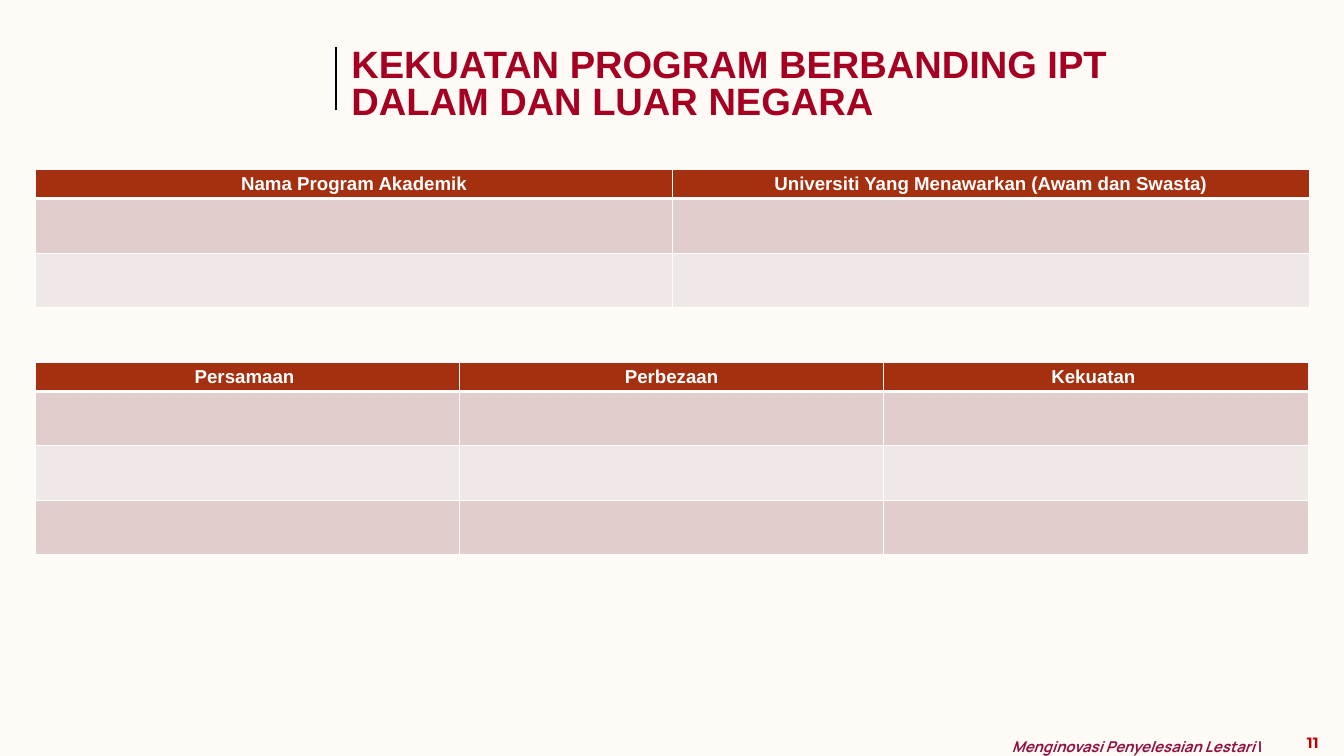
"""Builds the slide comparing a programme's strengths with other universities."""
from lxml.etree import SubElement
from pptx import Presentation
from pptx.dml.color import RGBColor
from pptx.enum.shapes import MSO_CONNECTOR
from pptx.enum.text import MSO_ANCHOR, PP_ALIGN
from pptx.oxml.ns import qn
from pptx.util import Cm, Pt

CREAM = RGBColor(0xFE, 0xFA, 0xF5)
CRIMSON = RGBColor(0xA5, 0x00, 0x21)
PLUM = RGBColor(0x90, 0x10, 0x42)
RED = RGBColor(0xC0, 0x00, 0x00)
BLACK = RGBColor(0, 0, 0)
WHITE = RGBColor(0xFF, 0xFF, 0xFF)
RUST = RGBColor(0xA5, 0x30, 0x0F)
BANDS = RGBColor(0xE1, 0xCD, 0xCC), RGBColor(0xF0, 0xE8, 0xE7)

TABLE_WIDTH = 48.13
HEADER_HEIGHT = 1.05
ROW_HEIGHT = 2.06


def write(paragraph, text, *, size, color, font="Arial", italic=False,
          align=PP_ALIGN.LEFT, spacing=None):
    """Add a bold run to a paragraph and return nothing."""
    paragraph.alignment = align
    if spacing:
        paragraph.line_spacing = spacing
    run = paragraph.add_run()
    run.text = text
    run.font.name = font
    run.font.size = Pt(size)
    run.font.bold = True
    run.font.italic = italic
    run.font.color.rgb = color


def add_text_area(slide, left, top, width, height, inset=None):
    """Add a wrapping text box and return its first paragraph."""
    frame = slide.shapes.add_textbox(Cm(left), Cm(top), Cm(width), Cm(height)).text_frame
    frame.word_wrap = True
    if inset is not None:
        frame.margin_left = frame.margin_right = Cm(inset)
        frame.margin_top = frame.margin_bottom = Cm(inset)
    return frame.paragraphs[0]


def add_rule(slide, x, top, bottom):
    """Add the vertical black rule beside the title."""
    rule = slide.shapes.add_connector(MSO_CONNECTOR.STRAIGHT, Cm(x), Cm(bottom), Cm(x), Cm(top))
    rule.line.color.rgb = BLACK
    rule.line.width = Pt(3)
    SubElement(rule._element.spPr, qn("a:effectLst"))


def set_borders(cell, top, bottom):
    """Draw white cell borders with the given top and bottom widths."""
    properties = cell._tc.get_or_add_tcPr()
    for side, width in (("L", 1), ("R", 1), ("T", top), ("B", bottom)):
        border = SubElement(properties, qn(f"a:ln{side}"), w=str(Pt(width)))
        fill = SubElement(border, qn("a:solidFill"))
        SubElement(fill, qn("a:srgbClr"), val=str(WHITE))


def add_blank_form(slide, left, top, headings, blank_rows):
    """Add a table with headings and banded empty rows."""
    height = HEADER_HEIGHT + blank_rows * ROW_HEIGHT
    form = slide.shapes.add_table(blank_rows + 1, len(headings), Cm(left), Cm(top),
                                  Cm(TABLE_WIDTH), Cm(height)).table
    for column in form.columns:
        column.width = Cm(TABLE_WIDTH / len(headings))
    for index, row in enumerate(form.rows):
        row.height = Cm(ROW_HEIGHT if index else HEADER_HEIGHT)
        for cell in row.cells:
            set_borders(cell, top=3 if index == 1 else 1, bottom=1 if index else 3)
            cell.fill.solid()
            cell.fill.fore_color.rgb = BANDS[(index - 1) % 2] if index else RUST
    for cell, heading in zip(form.rows[0].cells, headings):
        cell.vertical_anchor = MSO_ANCHOR.MIDDLE
        write(cell.text_frame.paragraphs[0], heading, size=20, color=WHITE,
              align=PP_ALIGN.CENTER)


def main():
    """Build and save the slide."""
    deck = Presentation()
    deck.slide_width, deck.slide_height = Cm(50.8), Cm(28.58)
    slide = deck.slides.add_slide(deck.slide_layouts[6])
    slide.background.fill.solid()
    slide.background.fill.fore_color.rgb = CREAM

    motto = add_text_area(slide, 38.25, 27.61, 10.67, 0.97, inset=0)
    motto_format = {"size": 16, "color": PLUM, "font": "Manrope", "spacing": 1.4}
    write(motto, "Menginovasi Penyelesaian Lestari ", italic=True, **motto_format)
    write(motto, "|", **motto_format)
    add_rule(slide, 12.7, 1.78, 4.17)
    write(add_text_area(slide, 48.44, 27.61, 2.36, 0.94), "11", size=16, color=RED,
          font="Montserrat", align=PP_ALIGN.CENTER)

    add_blank_form(slide, 1.35, 6.4, [
        "Nama Program Akademik", "Universiti Yang Menawarkan (Awam dan Swasta)"], 2)
    add_blank_form(slide, 1.32, 13.69, ["Persamaan ", "Perbezaan", "Kekuatan "], 3)

    write(add_text_area(slide, 13.03, 1.75, 32.46, 3.18),
          "KEKUATAN PROGRAM BERBANDING IPT DALAM DAN LUAR NEGARA",
          size=40.8, color=CRIMSON, spacing=0.8)
    deck.save("out.pptx")


if __name__ == "__main__":
    main()
